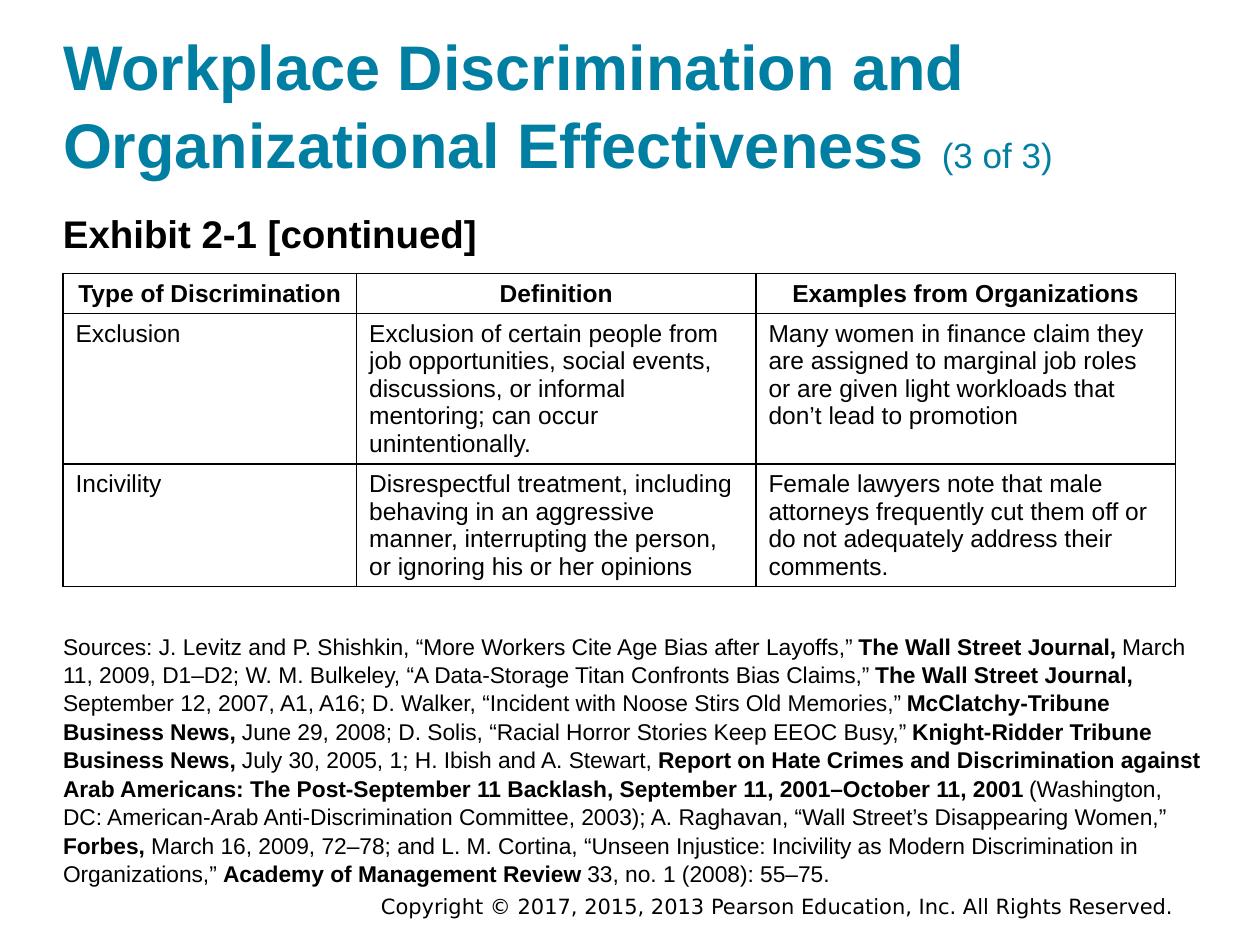
from lxml.etree import SubElement
from pptx import Presentation
from pptx.dml.color import RGBColor
from pptx.enum.text import MSO_ANCHOR, MSO_AUTO_SIZE, PP_ALIGN
from pptx.oxml.ns import qn
from pptx.util import Emu, Pt

PX = 9144
BLACK, TEAL, WHITE = "000000", "007FA3", "FFFFFF"

COLS = [233, 317, 333]
ROW_HEIGHTS = [30, 104, 85]
ROWS = [
    ["Type of Discrimination", "Definition", "Examples from Organizations"],
    ["Exclusion",
     "Exclusion of certain people from job opportunities, social events, discussions, "
     "or informal mentoring; can occur unintentionally.",
     "Many women in finance claim they are assigned to marginal job roles or are given "
     "light workloads that don’t lead to promotion"],
    ["Incivility",
     "Disrespectful treatment, including behaving in an aggressive manner, interrupting "
     "the person, or ignoring his or her opinions",
     "Female lawyers note that male attorneys frequently cut them off or do not "
     "adequately address their comments."],
]
SOURCES = [
    "Sources: J. Levitz and P. Shishkin, “More Workers Cite Age Bias after Layoffs,”",
    " The Wall Street Journal, ",
    "March 11, 2009, D1–D2; W. M. Bulkeley, “A Data-Storage Titan Confronts Bias Claims,”",
    " The Wall Street Journal, ",
    "September 12, 2007, A1, A16; D. Walker, “Incident with Noose Stirs Old Memories,”",
    " McClatchy-Tribune Business News, ",
    "June 29, 2008; D. Solis, “Racial Horror Stories Keep EEOC Busy,”",
    " Knight-Ridder Tribune Business News, ",
    "July 30, 2005, 1; H. Ibish and A. Stewart,",
    " Report on Hate Crimes and Discrimination against Arab Americans: The Post-September 11 "
    "Backlash, September 11, 2001–October 11, 2001 ",
    "(Washington, DC: American-Arab Anti-Discrimination Committee, 2003); A. Raghavan, "
    "“Wall Street’s Disappearing Women,”",
    " Forbes, ",
    "March 16, 2009, 72–78; and L. M. Cortina, “Unseen Injustice: Incivility as Modern "
    "Discrimination in Organizations,” ",
    "Academy of Management Review ",
    "33, no. 1 (2008): 55–75.",
]


def px(n):
    return Emu(n * PX)


def rgb(value):
    return RGBColor.from_string(value)


class Deck:
    """Holds the style and the current slide, and draws each kind of element."""

    def __init__(self, s, font="Arial"):
        self.s = s
        self.font = font

    def style(self, r, size, bold=False, color=BLACK, font=None):
        r.font.name = font or self.font
        r.font.size = Pt(size)
        r.font.bold = bold
        r.font.color.rgb = rgb(color)

    def frame(self, sp, box, anchor=MSO_ANCHOR.TOP, inset=0):
        sp.left, sp.top, sp.width, sp.height = map(px, box)
        tf = sp.text_frame
        tf.word_wrap = True
        tf.auto_size = MSO_AUTO_SIZE.NONE
        tf.vertical_anchor = anchor
        tf.margin_left = tf.margin_right = px(inset)
        tf.margin_top = tf.margin_bottom = px(inset // 2)
        return tf.paragraphs[0]

    def runs(self, p, parts):
        for text, look in parts:
            r = p.add_run()
            r.text = text
            self.style(r, **look)

    def title(self, box, parts):
        p = self.frame(self.s.shapes.title, box, MSO_ANCHOR.BOTTOM)
        p.alignment = PP_ALIGN.LEFT
        p.line_spacing = 1.04
        self.runs(p, parts)

    def text(self, box, parts, align=PP_ALIGN.LEFT, inset=0, spacing=1.0):
        p = self.frame(self.s.shapes.add_textbox(0, 0, 0, 0), box, inset=inset)
        p.alignment = align
        p.line_spacing = spacing
        self.runs(p, parts)

    def border(self, cell):
        tcPr = cell._tc.get_or_add_tcPr()
        for side in ("a:lnL", "a:lnR", "a:lnT", "a:lnB"):
            ln = SubElement(tcPr, qn(side), w=str(Pt(1)))
            fill = SubElement(ln, qn("a:solidFill"))
            SubElement(fill, qn("a:srgbClr"), val=BLACK)

    def table(self, left, top, cols, heights, rows, size):
        box = map(px, (left, top, sum(cols), sum(heights)))
        tbl = self.s.shapes.add_table(len(rows), len(cols), *box).table
        tbl.horz_banding = False
        for col, width in zip(tbl.columns, cols):
            col.width = px(width)
        for i, (row, height, texts) in enumerate(zip(tbl.rows, heights, rows)):
            row.height = px(height)
            for cell, text in zip(row.cells, texts):
                self.border(cell)
                cell.fill.solid()
                cell.fill.fore_color.rgb = rgb(WHITE)
                cell.vertical_anchor = MSO_ANCHOR.TOP if i else MSO_ANCHOR.BOTTOM
                p = cell.text_frame.paragraphs[0]
                p.text = text
                p.alignment = PP_ALIGN.LEFT if i else PP_ALIGN.CENTER
                self.style(p.runs[0], size, bold=i == 0)


def main():
    prs = Presentation()
    prs.slide_width, prs.slide_height = px(1000), px(750)
    deck = Deck(prs.slides.add_slide(prs.slide_layouts[5]))
    deck.title((50, 24, 900, 120), [
        ("Workplace Discrimination and Organizational Effectiveness ",
         dict(size=36, bold=True, color=TEAL)),
        ("(3 of 3)", dict(size=20, color=TEAL)),
    ])
    deck.text((50, 167, 900, 42), [("Exhibit 2-1 [continued]", dict(size=22, bold=True))])
    deck.table(50, 217, COLS, ROW_HEIGHTS, ROWS, size=14)
    deck.text((50, 501, 908, 195),
              [(text, dict(size=13, bold=i % 2 == 1)) for i, text in enumerate(SOURCES)],
              spacing=1.04)
    deck.text((283, 704, 668, 30),
              [("Copyright © 2017, 2015, 2013 Pearson Education, Inc. All Rights Reserved.",
                dict(size=12, font="DejaVu Sans"))],
              align=PP_ALIGN.CENTER, inset=10)
    prs.save("out.pptx")


if __name__ == "__main__":
    main()
